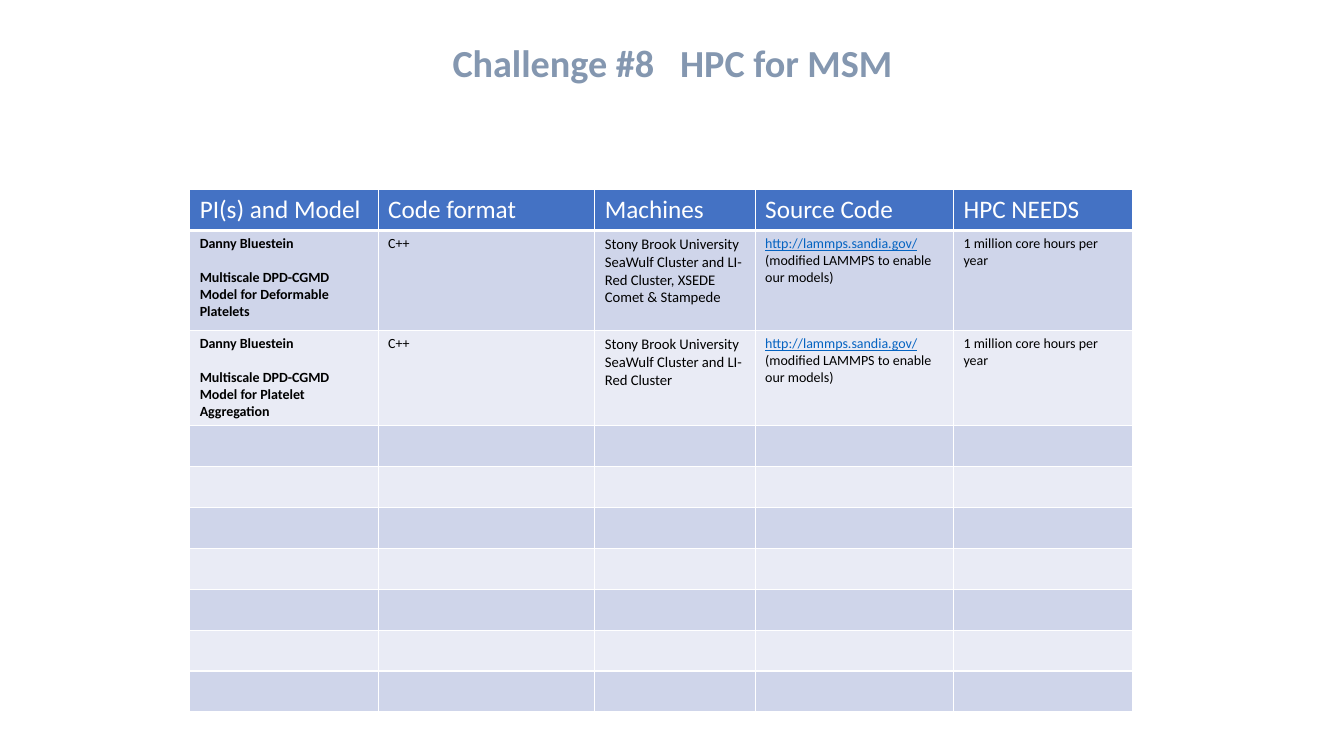
from lxml.etree import SubElement
from pptx import Presentation
from pptx.dml.color import RGBColor
from pptx.enum.text import MSO_ANCHOR, PP_ALIGN
from pptx.oxml.ns import qn
from pptx.util import Cm, Pt

FONT = "Calibri"
COLORS = {
    "title": "8497B0", "header": "4472C4", "odd": "CFD5EA", "even": "E9EBF5",
    "white": "FFFFFF", "text": "000000", "link": "0563C1",
}
TITLE = ("Challenge #8", "HPC for MSM")
HEADERS = ["PI(s) and Model", "Code format", "Machines", "Source Code", "HPC NEEDS"]
INVESTIGATOR = "Danny Bluestein"
CODE_FORMAT = "C++"
SOURCE_LINK = "http://lammps.sandia.gov/"
SOURCE_NOTE = " (modified LAMMPS to enable our models)"
HPC_NEED = "1 million core hours per year"
MODELS = [
    ("Multiscale DPD-CGMD Model for Deformable Platelets",
     "Stony Brook University SeaWulf Cluster and LI-Red Cluster, XSEDE Comet & Stampede"),
    ("Multiscale DPD-CGMD Model for Platelet Aggregation",
     "Stony Brook University SeaWulf Cluster and LI-Red Cluster"),
]
EMPTY_ROWS = 7
COLUMN_WIDTHS = [4.75, 5.46, 4.04, 5.0, 4.5]
PLAIN_HEIGHT = 1.03
ROW_HEIGHTS = [PLAIN_HEIGHT, 2.52, 2.4] + [PLAIN_HEIGHT] * EMPTY_ROWS
TABLE_LEFT, TABLE_TOP = 4.78, 4.78


def color(name):
    return RGBColor.from_string(COLORS[name])


def style(font, size, color_name, bold=False):
    font.name, font.size, font.bold = FONT, Pt(size), bold
    font.color.rgb = color(color_name)


def add_title(slide):
    box = slide.shapes.add_textbox(Cm(6.15), Cm(0.2), Cm(21.59), Cm(2.74))
    frame = box.text_frame
    frame.word_wrap = True
    frame.vertical_anchor = MSO_ANCHOR.MIDDLE
    paragraph = frame.paragraphs[0]
    paragraph.alignment = PP_ALIGN.CENTER
    for text in (TITLE[0], " ", TITLE[1]):
        run = paragraph.add_run()
        run.text = text
        if text == " ":
            run._r.get_or_add_rPr().set("spc", "1240")
    style(paragraph.font, 27.3, "title", True)


def paint_cell(cell, fill_name, bottom_width):
    properties = cell._tc.get_or_add_tcPr()
    for side, width in (("L", 1), ("R", 1), ("T", 1), ("B", bottom_width)):
        line = SubElement(properties, qn(f"a:ln{side}"), w=str(Pt(width)))
        fill = SubElement(line, qn("a:solidFill"))
        SubElement(fill, qn("a:srgbClr"), val=COLORS["white"])
    cell.fill.solid()
    cell.fill.fore_color.rgb = color(fill_name)


def write_cell(cell, text, size, color_name="text", bold=False):
    paragraph = cell.text_frame.paragraphs[0]
    paragraph.text = text
    style(paragraph.font, size, color_name, bold)
    return paragraph


def write_model_row(cells, model, machines):
    investigator = write_cell(cells[0], INVESTIGATOR, 10, bold=True)
    investigator.space_after = Pt(12)
    model_paragraph = cells[0].text_frame.add_paragraph()
    model_paragraph.text = model
    style(model_paragraph.font, 10, "text", True)
    write_cell(cells[1], CODE_FORMAT, 10)
    write_cell(cells[2], machines, 10.5)
    source = write_cell(cells[3], SOURCE_LINK, 10)
    link = source.runs[0]
    link.font.color.rgb = color("link")
    link.font.underline = True
    source.add_run().text = SOURCE_NOTE
    write_cell(cells[4], HPC_NEED, 10)


def add_model_table(slide):
    frame = slide.shapes.add_table(
        len(ROW_HEIGHTS), len(HEADERS), Cm(TABLE_LEFT), Cm(TABLE_TOP),
        Cm(sum(COLUMN_WIDTHS)), Cm(sum(ROW_HEIGHTS)))
    table = frame.table
    for column, width in zip(table.columns, COLUMN_WIDTHS):
        column.width = Cm(width)
    for index, (row, height) in enumerate(zip(table.rows, ROW_HEIGHTS)):
        row.height = Cm(height)
        fill_name = "header" if index == 0 else ("even", "odd")[index % 2]
        for cell in row.cells:
            paint_cell(cell, fill_name, 3 if index == 0 else 1)
    for cell, header in zip(table.rows[0].cells, HEADERS):
        write_cell(cell, header, 18, "white")
    for index, (model, machines) in enumerate(MODELS, start=1):
        write_model_row(list(table.rows[index].cells), model, machines)


def main():
    """Build the HPC challenge slide."""
    presentation = Presentation()
    presentation.slide_width, presentation.slide_height = Cm(33.87), Cm(19.05)
    slide = presentation.slides.add_slide(presentation.slide_layouts[6])
    add_model_table(slide)
    add_title(slide)
    presentation.save("out.pptx")


if __name__ == "__main__":
    main()
